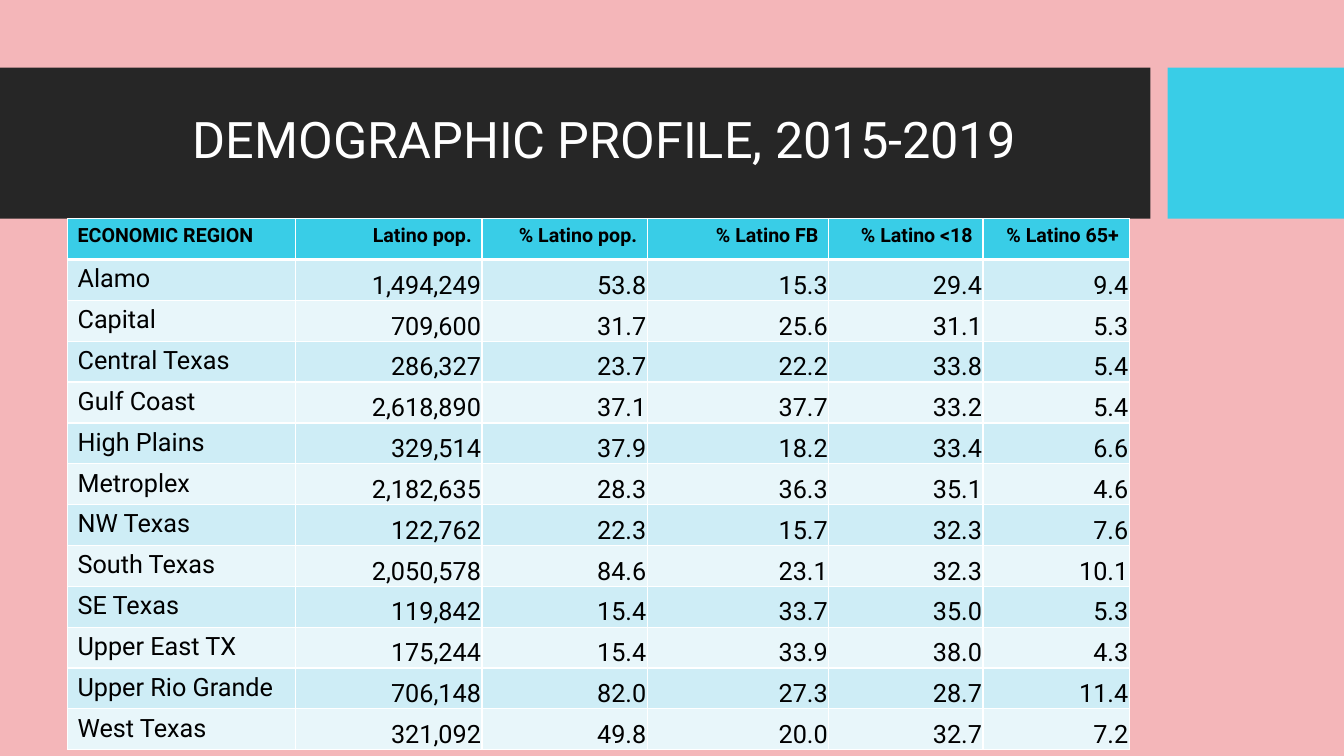
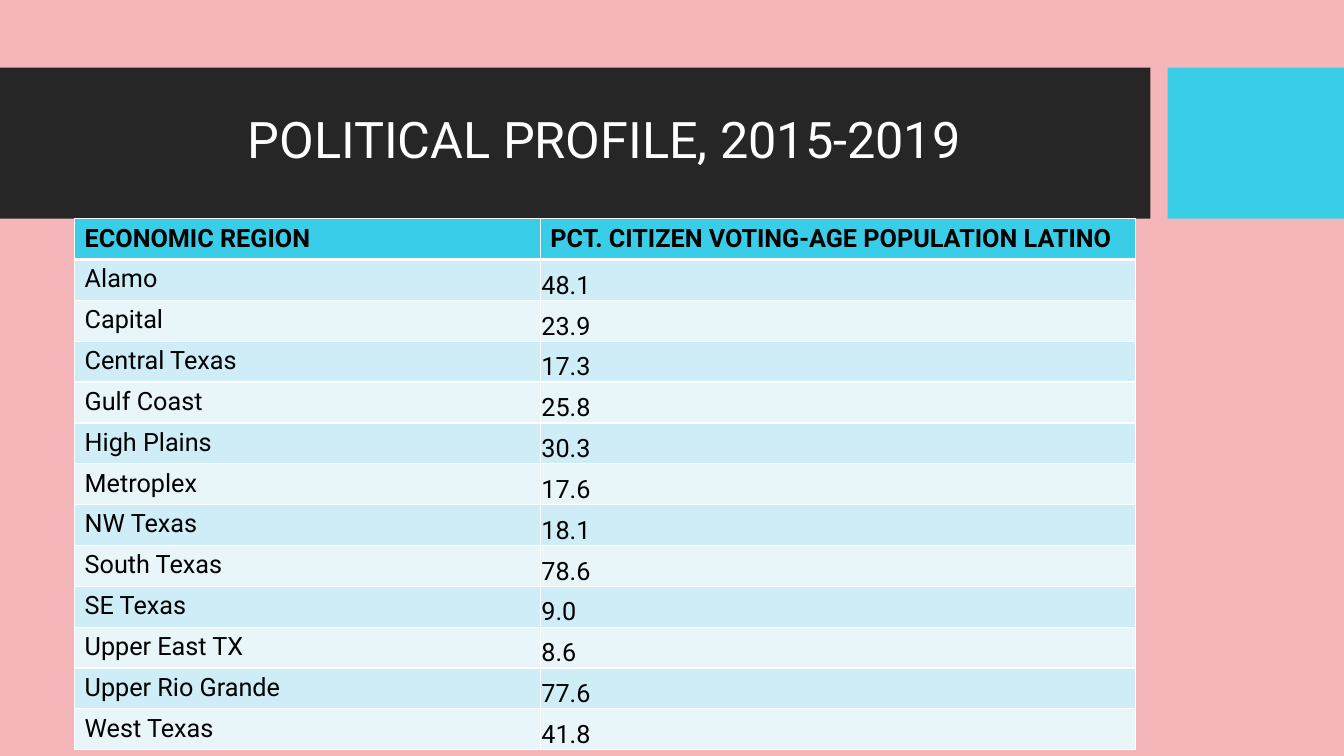
import pptx
import pptx.dml.color
import pptx.enum.shapes
import pptx.enum.text
import pptx.oxml
import pptx.oxml.ns
import pptx.util

Inches = pptx.util.Inches
Pt = pptx.util.Pt
ALIGN = pptx.enum.text.PP_ALIGN
ANCHOR = pptx.enum.text.MSO_ANCHOR

REGIONS = ["Alamo", "Capital", "Central Texas", "Gulf Coast", "High Plains", "Metroplex",
           "NW Texas", "South Texas", "SE Texas", "Upper East TX", "Upper Rio Grande",
           "West Texas"]
DEMOGRAPHIC_HEADINGS = ["ECONOMIC REGION", "Latino pop.", "% Latino pop.", "% Latino FB",
                        "% Latino <18", "% Latino 65+"]
DEMOGRAPHICS = [
    ["1,494,249", "53.8", "15.3", "29.4", "9.4"],
    ["709,600", "31.7", "25.6", "31.1", "5.3"],
    ["286,327", "23.7", "22.2", "33.8", "5.4"],
    ["2,618,890", "37.1", "37.7", "33.2", "5.4"],
    ["329,514", "37.9", "18.2", "33.4", "6.6"],
    ["2,182,635", "28.3", "36.3", "35.1", "4.6"],
    ["122,762", "22.3", "15.7", "32.3", "7.6"],
    ["2,050,578", "84.6", "23.1", "32.3", "10.1"],
    ["119,842", "15.4", "33.7", "35.0", "5.3"],
    ["175,244", "15.4", "33.9", "38.0", "4.3"],
    ["706,148", "82.0", "27.3", "28.7", "11.4"],
    ["321,092", "49.8", "20.0", "32.7", "7.2"],
]
POLITICAL_HEADINGS = ["ECONOMIC REGION", "PCT. CITIZEN VOTING-AGE POPULATION LATINO"]
CITIZEN_SHARES = ["48.1", "23.9", "17.3", "25.8", "30.3", "17.6", "18.1", "78.6", "9.0",
                  "8.6", "77.6", "41.8"]


def rgb(value):
    return pptx.dml.color.RGBColor.from_string(value)


class Deck:
    """Holds the shared style and the slide being built."""

    FONT = "Roboto"
    PINK, DARK, CYAN = "F4B6B9", "262626", "39CDE7"
    WHITE, BLACK = "FFFFFF", "000000"
    ROW_FILLS = ("E8F6FA", "CEEDF6")
    BAND_TOP, BAND_HEIGHT = 0.67, 1.5
    TABLE_HEIGHT = 5.27

    def __init__(self):
        self.presentation = pptx.Presentation()
        self.presentation.slide_width = Inches(13.33)
        self.presentation.slide_height = Inches(7.5)
        self.slide = None

    def add_slide(self, title):
        self.slide = self.presentation.slides.add_slide(self.presentation.slide_layouts[6])
        background = self.slide.background.fill
        background.solid()
        background.fore_color.rgb = rgb(self.PINK)
        self.band(0, 11.41, self.DARK)
        self.band(11.58, 1.75, self.CYAN)
        self.title(title)

    def band(self, left, width, color):
        band = self.slide.shapes.add_shape(
            pptx.enum.shapes.MSO_SHAPE.RECTANGLE, Inches(left), Inches(self.BAND_TOP),
            Inches(width), Inches(self.BAND_HEIGHT))
        band.shadow.inherit = False
        band.fill.solid()
        band.fill.fore_color.rgb = rgb(color)
        band.line.fill.background()

    def title(self, text):
        frame = self.slide.shapes.add_textbox(
            Inches(0.74), Inches(0.82), Inches(10.51), Inches(1.18)).text_frame
        frame.word_wrap = True
        frame.vertical_anchor = ANCHOR.MIDDLE
        frame.text = text
        heading = frame.paragraphs[0]
        heading.alignment = ALIGN.CENTER
        heading.line_spacing = 0.9
        self.style(heading, 36, self.WHITE)

    def style(self, paragraph, size, color, bold=False):
        for run in paragraph.runs:
            run.font.name = self.FONT
            run.font.size = Pt(size)
            run.font.bold = bold
            run.font.color.rgb = rgb(color)

    def table(self, left, widths, headings, records, header_size, value_align):
        rows = [headings] + records
        table = self.slide.shapes.add_table(
            len(rows), len(widths), Inches(left), Inches(self.BAND_TOP + self.BAND_HEIGHT),
            Inches(sum(widths)), Inches(self.TABLE_HEIGHT)).table
        for column, width in zip(table.columns, widths):
            column.width = Inches(width)
        for row_index, row in enumerate(rows):
            for column_index, text in enumerate(row):
                cell = table.cell(row_index, column_index)
                is_header, is_value = row_index == 0, column_index > 0
                cell.text_frame.text = text
                label = cell.text_frame.paragraphs[0]
                label.alignment = value_align if is_value else ALIGN.LEFT
                self.style(label, header_size if is_header else 18, self.BLACK, is_header)
                if is_value and not is_header:
                    cell.vertical_anchor = ANCHOR.BOTTOM
                    cell.margin_left = cell.margin_right = cell.margin_top = Inches(0.01)
                    cell.margin_bottom = 0
                cell.fill.solid()
                cell.fill.fore_color.rgb = rgb(
                    self.CYAN if is_header else self.ROW_FILLS[row_index % 2])
                self.borders(cell, top=3 if row_index == 1 else 1, bottom=3 if is_header else 1)

    def borders(self, cell, top, bottom):
        properties = cell._tc.get_or_add_tcPr()
        for position, (side, width) in enumerate(
                [("lnL", 1), ("lnR", 1), ("lnT", top), ("lnB", bottom)]):
            properties.insert(position, pptx.oxml.parse_xml(
                f'<a:{side} {pptx.oxml.ns.nsdecls("a")} w="{Pt(width)}"><a:solidFill>'
                f'<a:srgbClr val="{self.WHITE}"/></a:solidFill></a:{side}>'))


def main():
    deck = Deck()
    deck.add_slide("DEMOGRAPHIC PROFILE, 2015-2019")
    deck.table(0.67, [2.26, 1.85, 1.64, 1.8, 1.53, 1.45], DEMOGRAPHIC_HEADINGS,
               [[region] + values for region, values in zip(REGIONS, DEMOGRAPHICS)],
               14, ALIGN.RIGHT)
    deck.add_slide("POLITICAL PROFILE, 2015-2019")
    deck.table(0.74, [4.62, 5.9], POLITICAL_HEADINGS,
               [[region, share] for region, share in zip(REGIONS, CITIZEN_SHARES)],
               18, ALIGN.LEFT)
    deck.presentation.save("out.pptx")


if __name__ == "__main__":
    main()
